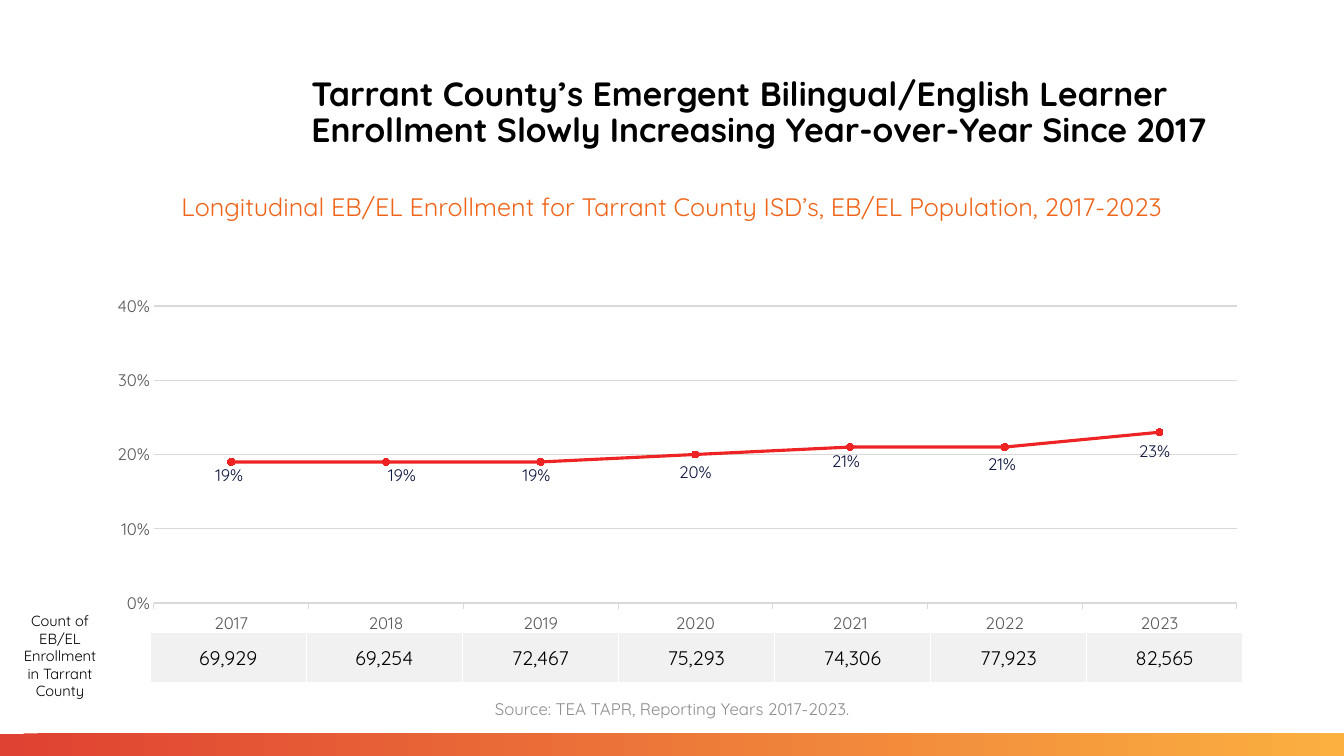
from dataclasses import dataclass

from lxml import etree
from pptx import Presentation
from pptx.chart.data import CategoryChartData
from pptx.dml.color import RGBColor
from pptx.enum.chart import XL_CHART_TYPE, XL_LABEL_POSITION, XL_MARKER_STYLE, XL_TICK_MARK
from pptx.enum.shapes import MSO_SHAPE
from pptx.enum.text import MSO_ANCHOR, MSO_AUTO_SIZE, PP_ALIGN
from pptx.oxml import parse_xml
from pptx.oxml.ns import nsdecls, qn
from pptx.util import Pt

LINE_MARKERS = XL_CHART_TYPE.LINE_MARKERS
BELOW = XL_LABEL_POSITION.BELOW
CIRCLE = XL_MARKER_STYLE.CIRCLE
TICK_NONE, TICK_OUT = XL_TICK_MARK.NONE, XL_TICK_MARK.OUTSIDE
RECTANGLE = MSO_SHAPE.RECTANGLE
TOP, MIDDLE = MSO_ANCHOR.TOP, MSO_ANCHOR.MIDDLE
FIT_SHAPE, FIXED = MSO_AUTO_SIZE.SHAPE_TO_FIT_TEXT, MSO_AUTO_SIZE.NONE
LEFT, CENTER = PP_ALIGN.LEFT, PP_ALIGN.CENTER

FONT = "Quicksand"
BLACK, GRAY, PALE_GRAY, RED = "000000", "595959", "D9D9D9", "ED2324"


@dataclass(frozen=True)
class Area:
    """A rectangle in points."""
    left: float
    top: float
    width: float
    height: float

    def lengths(self):
        return Pt(self.left), Pt(self.top), Pt(self.width), Pt(self.height)


@dataclass(frozen=True)
class SchoolYear:
    """One year's share and count; the label shift is in points."""
    year: str
    share: float
    count: str
    shift_x: float
    shift_y: float


@dataclass(frozen=True)
class Caption:
    text: str
    area: Area
    size: float
    color: str
    anchor: MSO_ANCHOR = TOP
    fit: MSO_AUTO_SIZE = FIT_SHAPE


YEARS = [
    SchoolYear("2017", 0.19, "69,929", -1.5, -3),
    SchoolYear("2018", 0.19, "69,254", 11.5, -3),
    SchoolYear("2019", 0.19, "72,467", -3, -3),
    SchoolYear("2020", 0.20, "75,293", 0, 0),
    SchoolYear("2021", 0.21, "74,306", -3, -3),
    SchoolYear("2022", 0.21, "77,923", -2, -0.5),
    SchoolYear("2023", 0.23, "82,565", -3.5, 1),
]
CAPTIONS = [
    Caption("Source: TEA TAPR, Reporting Years 2017-2023.",
            Area(118, 491.8, 724.3, 29.5), 12, "8C8C8C", MIDDLE, FIXED),
    Caption("Longitudinal EB/EL Enrollment for Tarrant County ISD’s, EB/EL Population, 2017-2023",
            Area(27.4, 133.2, 905, 29.5), 18, "EF6418"),
    Caption("Count of EB/EL Enrollment in Tarrant County",
            Area(7.2, 433.4, 71.3, 70.6), 10.5, BLACK),
]
TITLE = ("Tarrant County’s Emergent Bilingual/English Learner "
         "Enrollment Slowly Increasing Year-over-Year Since 2017")
TITLE_AREA = Area(215.3, 28.8, 753.1, 104.4)
BAR_AREA = Area(0, 524.2, 960, 15.8)
CHART_AREA = Area(66.2, 174.2, 828, 278.6)
PLOT_AREA = Area(110, 218.8, 773.5, 213)
TABLE_AREA = Area(107.3, 451.4, 780.5, 37.4)


def rgb(color: str) -> RGBColor:
    return RGBColor.from_string(color)


def style_font(font, size: float, color: str, bold: bool = False) -> None:
    font.name, font.size, font.bold = FONT, Pt(size), bold
    font.color.rgb = rgb(color)


def write_text(frame, text: str, *, size: float, color: str = BLACK, bold: bool = False,
               align: PP_ALIGN = CENTER, spacing: float = 1.0) -> None:
    para = frame.paragraphs[0]
    para.alignment, para.line_spacing = align, spacing
    span = para.add_run()
    span.text = text
    style_font(span.font, size, color, bold)


def add_title(page) -> None:
    title = page.shapes.title
    title.left, title.top, title.width, title.height = TITLE_AREA.lengths()
    frame = title.text_frame
    frame.word_wrap, frame.auto_size, frame.vertical_anchor = True, FIXED, MIDDLE
    write_text(frame, TITLE, size=24, bold=True, align=LEFT, spacing=0.9)


def add_caption(page, caption: Caption) -> None:
    frame = page.shapes.add_textbox(*caption.area.lengths()).text_frame
    frame.word_wrap, frame.auto_size = True, caption.fit
    frame.vertical_anchor = caption.anchor
    write_text(frame, caption.text, size=caption.size, color=caption.color)


def add_bottom_bar(page) -> None:
    bar = page.shapes.add_shape(RECTANGLE, *BAR_AREA.lengths())
    bar.shadow.inherit = False
    bar.line.fill.background()
    bar.fill.gradient()
    bar.fill.gradient_angle = 1
    for stop, position, color in zip(bar.fill.gradient_stops, (0, 1), ("DF4132", "FBB040")):
        stop.position, stop.color.rgb = position, rgb(color)


def style_line(line, color: str, width: float) -> None:
    line.color.rgb, line.width = rgb(color), Pt(width)


def add_layout(parent, index: int, **settings) -> None:
    """Insert a manual chart layout with the given settings."""
    layout = parse_xml(f"<c:layout {nsdecls('c')}><c:manualLayout/></c:layout>")
    for name, value in settings.items():
        etree.SubElement(layout[0], qn(f"c:{name}")).set("val", str(value))
    parent.insert(index, layout)


def place_plot(chart) -> None:
    plot_area = chart.plots[0]._element.getparent()
    for layout in plot_area.findall(qn("c:layout")):
        plot_area.remove(layout)
    add_layout(plot_area, 0, layoutTarget="inner", xMode="edge", yMode="edge",
               x=(PLOT_AREA.left - CHART_AREA.left) / CHART_AREA.width,
               y=(PLOT_AREA.top - CHART_AREA.top) / CHART_AREA.height,
               w=PLOT_AREA.width / CHART_AREA.width,
               h=PLOT_AREA.height / CHART_AREA.height)


def style_axes(chart) -> None:
    years, shares = chart.category_axis, chart.value_axis
    for axis in (years, shares):
        style_font(axis.tick_labels.font, 12, GRAY)
        axis.minor_tick_mark = TICK_NONE
    years.major_tick_mark, shares.major_tick_mark = TICK_OUT, TICK_NONE
    style_line(years.format.line, PALE_GRAY, 0.75)
    shares.format.line.fill.background()
    shares.minimum_scale, shares.maximum_scale, shares.major_unit = 0, 0.4, 0.1
    shares.tick_labels.number_format = "0%"
    shares.tick_labels.number_format_is_linked = False
    style_line(shares.major_gridlines.format.line, PALE_GRAY, 0.75)


def style_series(series) -> None:
    series.smooth = False
    style_line(series.format.line, RED, 2.25)
    marker = series.marker
    marker.style, marker.size = CIRCLE, 5
    marker.format.fill.solid()
    marker.format.fill.fore_color.rgb = rgb(RED)
    style_line(marker.format.line, RED, 0.75)
    for index, year in enumerate(YEARS):
        label = series.points[index].data_label
        style_font(label.font, 12, "0F173F")
        label.position = BELOW
        element = series._element.find(f"{qn('c:dLbls')}/{qn('c:dLbl')}[{index + 1}]")
        add_layout(element, 1, x=year.shift_x / CHART_AREA.width,
                   y=year.shift_y / CHART_AREA.height)


def add_share_chart(page) -> None:
    chart_data = CategoryChartData(number_format="0%")
    chart_data.categories = [year.year for year in YEARS]
    chart_data.add_series("Series 1", [year.share for year in YEARS])
    chart = page.shapes.add_chart(LINE_MARKERS, *CHART_AREA.lengths(), chart_data).chart
    chart.has_legend = chart.has_title = False
    style_font(chart.font, 10, BLACK)
    chart.plots[0].vary_by_categories = False
    place_plot(chart)
    style_axes(chart)
    style_series(chart.plots[0].series[0])


def add_borders(cell) -> None:
    properties = cell._tc.get_or_add_tcPr()
    for index, (side, width) in enumerate({"L": 1, "R": 1, "T": 1, "B": 3}.items()):
        properties.insert(index, parse_xml(
            f'<a:ln{side} {nsdecls("a")} w="{Pt(width)}"><a:solidFill>'
            f'<a:srgbClr val="FFFFFF"/></a:solidFill></a:ln{side}>'))


def add_count_table(page) -> None:
    table = page.shapes.add_table(1, len(YEARS), *TABLE_AREA.lengths()).table
    table.first_row = table.horz_banding = False
    for column, cell, year in zip(table.columns, table.rows[0].cells, YEARS):
        column.width = Pt(TABLE_AREA.width / len(YEARS))
        cell.margin_left = cell.margin_right = cell.margin_top = Pt(0.7)
        cell.margin_bottom = Pt(0)
        cell.vertical_anchor = MIDDLE
        cell.fill.solid()
        cell.fill.fore_color.rgb = rgb("F1F1F1")
        add_borders(cell)
        write_text(cell.text_frame, year.count, size=14)


def main() -> None:
    deck = Presentation()
    deck.slide_width, deck.slide_height = Pt(960), Pt(540)
    page = deck.slides.add_slide(deck.slide_layouts.get_by_name("Title Only"))
    add_bottom_bar(page)
    add_title(page)
    add_share_chart(page)
    add_count_table(page)
    for caption in CAPTIONS:
        add_caption(page, caption)
    deck.save("out.pptx")


if __name__ == "__main__":
    main()
